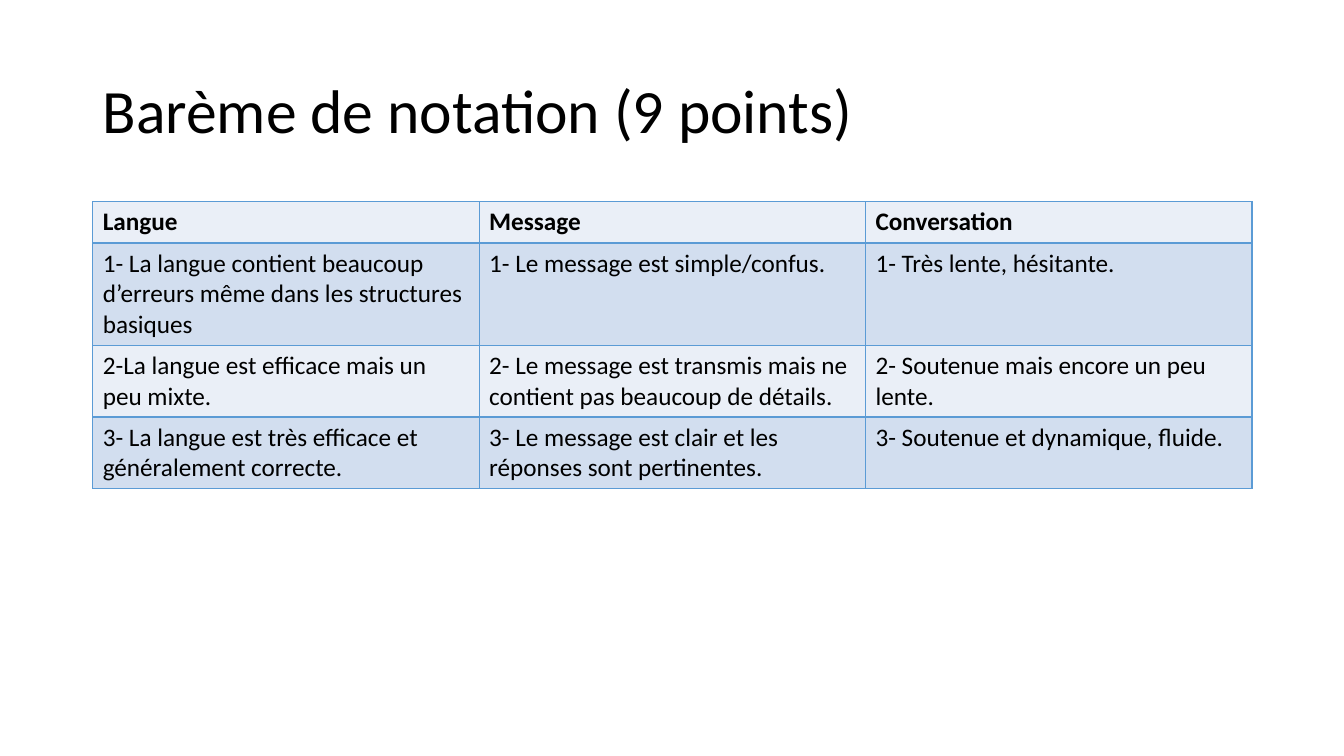
from dataclasses import dataclass

from lxml import etree
from pptx import Presentation
from pptx import util as u
from pptx.dml.color import RGBColor
from pptx.enum import text
from pptx.oxml import ns

SLIDE_W, SLIDE_H = u.Inches(13.33), u.Inches(7.5)
LEFT, WIDTH = 0.069, 0.8625
TITLE_TOP, TITLE_HEIGHT = 0.053, 0.193
GRID_TOP, ROW_HEIGHT = 0.2667, 0.0547

RUBRIC = [
    ("Langue", "Message", "Conversation"),
    (
        "1- La langue contient beaucoup d’erreurs même dans les structures basiques",
        "1- Le message est simple/confus.",
        "1- Très lente, hésitante.",
    ),
    (
        "2-La langue est efficace mais un peu mixte.",
        "2- Le message est transmis mais ne contient pas beaucoup de détails.",
        "2- Soutenue mais encore un peu lente.",
    ),
    (
        "3- La langue est très efficace et généralement correcte.",
        "3- Le message est clair et les réponses sont pertinentes.",
        "3- Soutenue et dynamique, fluide.",
    ),
]


@dataclass(frozen=True)
class Theme:
    font: str = "Calibri"
    ink: str = "000000"
    border: str = "5B9BD5"
    bands: tuple = ("EAEFF7", "D2DEEF")
    title_size: int = 44
    body_size: int = 18
    border_width: int = 1


THEME = Theme()


def across(share):
    return round(SLIDE_W * share)


def down(share):
    return round(SLIDE_H * share)


def write(frame, words, size, bold=False):
    run = frame.paragraphs[0].add_run()
    run.text = words
    style = {"name": THEME.font, "size": u.Pt(size), "bold": bold}
    for key, value in style.items():
        setattr(run.font, key, value)
    run.font.color.rgb = RGBColor.from_string(THEME.ink)


def add_title(slide, words):
    frame = slide.shapes.add_textbox(
        across(LEFT), down(TITLE_TOP), across(WIDTH), down(TITLE_HEIGHT)
    ).text_frame
    layout = {
        "word_wrap": True,
        "auto_size": text.MSO_AUTO_SIZE.NONE,
        "vertical_anchor": text.MSO_ANCHOR.MIDDLE,
    }
    for key, value in layout.items():
        setattr(frame, key, value)
    write(frame, words, THEME.title_size)
    frame.paragraphs[0].line_spacing = 0.9


def outline(cell):
    properties = cell._tc.get_or_add_tcPr()
    for position, side in enumerate(("lnL", "lnR", "lnT", "lnB")):
        edge = etree.Element(ns.qn(f"a:{side}"), w=str(u.Pt(THEME.border_width)))
        paint = etree.SubElement(edge, ns.qn("a:solidFill"))
        etree.SubElement(paint, ns.qn("a:srgbClr"), val=THEME.border)
        properties.insert(position, edge)


def add_rubric(slide, rows):
    grid = slide.shapes.add_table(
        len(rows), len(rows[0]),
        across(LEFT), down(GRID_TOP), across(WIDTH), down(ROW_HEIGHT * len(rows)),
    ).table
    for r, criteria in enumerate(rows):
        for c, words in enumerate(criteria):
            cell = grid.cell(r, c)
            cell.fill.solid()
            cell.fill.fore_color.rgb = RGBColor.from_string(THEME.bands[r % 2])
            outline(cell)
            write(cell.text_frame, words, THEME.body_size, bold=r == 0)


def main():
    deck = Presentation()
    deck.slide_width, deck.slide_height = SLIDE_W, SLIDE_H
    slide = deck.slides.add_slide(deck.slide_layouts[6])
    add_title(slide, "Barème de notation (9 points)")
    add_rubric(slide, RUBRIC)
    deck.save("out.pptx")


if __name__ == "__main__":
    main()
